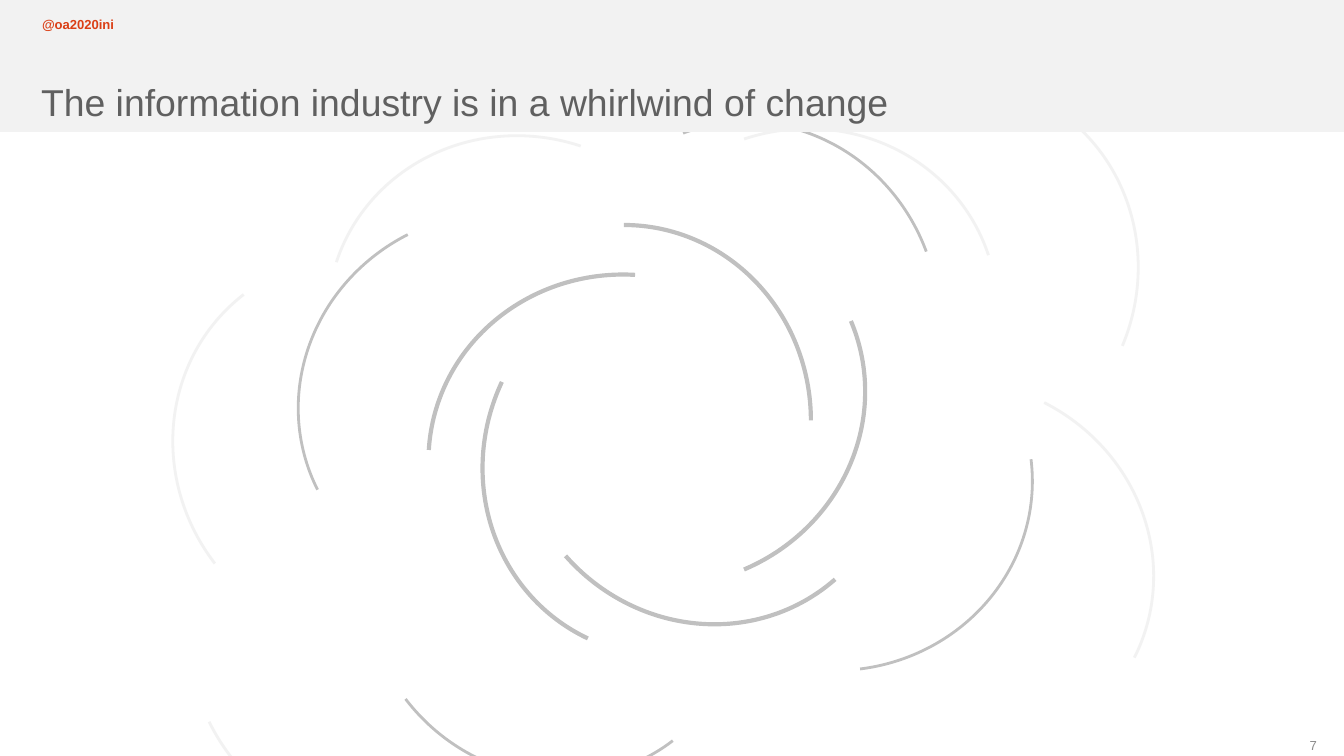
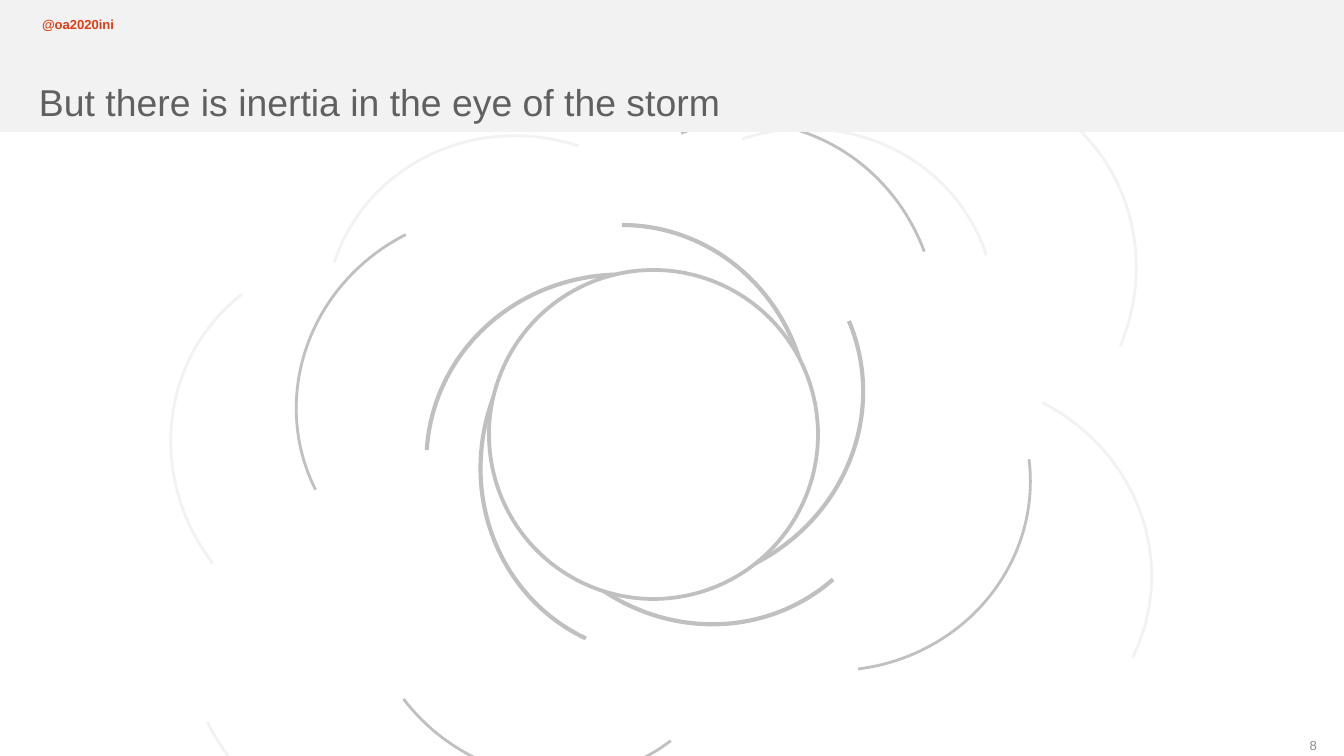
from typing import NamedTuple

from pptx import Presentation
from pptx.dml.color import RGBColor
from pptx.enum.shapes import MSO_SHAPE
from pptx.enum.text import MSO_ANCHOR, PP_ALIGN
from pptx.util import Emu, Pt

EMU_PER_PX = 914400 / 134.4
SLIDE_W, SLIDE_H = 1344, 756
BAND_H = 132
ARC_W, ARC_H = 374, 391
FONT = "Arial"
COLORS = {
    "paper": "FFFFFF",
    "pale": "F2F2F2",
    "ring": "C0C0C0",
    "title": "606060",
    "handle": "DB3F16",
    "number": "8C8C8C",
}


class Box(NamedTuple):
    x: int
    y: int
    w: int
    h: int


class Arc(NamedTuple):
    x: int
    y: int
    rotation: float


class Swirl(NamedTuple):
    color: str
    weight: float
    flipped: bool
    arcs: tuple[Arc, ...]


class TextStyle(NamedTuple):
    size: int
    color: str
    bold: bool = False
    align: PP_ALIGN = PP_ALIGN.LEFT
    anchor: MSO_ANCHOR = MSO_ANCHOR.TOP
    wrap: bool = False


class StormSlide(NamedTuple):
    number: int
    title: str
    shift: int
    eye: bool


TITLE = TextStyle(20, "title", anchor=MSO_ANCHOR.BOTTOM, wrap=True)
HANDLE = TextStyle(7, "handle", bold=True)
NUMBER = TextStyle(7, "number", align=PP_ALIGN.RIGHT, anchor=MSO_ANCHOR.BOTTOM)

SWIRLS = (
    Swirl("pale", 1.5, True, (
        Arc(616, 121, 71.7), Arc(773, 374, 116.8), Arc(176, 254, 322.4))),
    Swirl("pale", 1.5, False, (
        Arc(335, 128, 288.3), Arc(190, 444, 153.9), Arc(763, 78, 22.8))),
    Swirl("ring", 2.25, False, (
        Arc(437, 225, 0), Arc(437, 266, 273.4), Arc(484, 266, 205.2),
        Arc(519, 237, 138.7), Arc(484, 202, 67))),
    Swirl("ring", 1.5, False, (
        Arc(564, 121, 339.7), Arc(305, 206, 243.2), Arc(367, 390, 142.6),
        Arc(650, 288, 82.9))),
)
EYE = Box(489, 270, 329, 329)

SLIDES = (
    StormSlide(7, "The information industry is in a whirlwind of change", 0, False),
    StormSlide(8, "But there is inertia in the eye of the storm", -2, True),
)


def px(n: int) -> Emu:
    """Turn pixels into EMU."""
    return Emu(round(n * EMU_PER_PX))


def rgb(name: str) -> RGBColor:
    """Look up a named colour."""
    return RGBColor.from_string(COLORS[name])


def add_preset(shapes, kind: MSO_SHAPE, box: Box, fill: str = "",
               line: str = "", weight: float = 0):
    """Add a preset shape with an optional fill and outline."""
    sp = shapes.add_shape(kind, *map(px, box))
    sp.shadow.inherit = False
    if fill:
        sp.fill.solid()
        sp.fill.fore_color.rgb = rgb(fill)
    else:
        sp.fill.background()
    if line:
        sp.line.color.rgb = rgb(line)
        sp.line.width = Pt(weight)
    else:
        sp.line.fill.background()
    return sp


def add_text(s, box: Box, text: str, style: TextStyle) -> None:
    """Add a one-run text box without insets."""
    tf = s.shapes.add_textbox(*map(px, box)).text_frame
    tf.margin_left = tf.margin_top = tf.margin_right = tf.margin_bottom = 0
    tf.word_wrap = style.wrap
    tf.vertical_anchor = style.anchor
    p = tf.paragraphs[0]
    p.alignment = style.align
    r = p.add_run()
    r.text = text
    r.font.name = FONT
    r.font.size = Pt(style.size)
    r.font.bold = style.bold
    r.font.color.rgb = rgb(style.color)


def add_swirl(s, swirl: Swirl, shift: int) -> None:
    """Add a group of arcs that share one line style."""
    group = s.shapes.add_group_shape()
    for arc in swirl.arcs:
        box = Box(arc.x + shift, arc.y, ARC_W, ARC_H)
        sp = add_preset(group.shapes, MSO_SHAPE.ARC, box,
                        line=swirl.color, weight=swirl.weight)
        sp.rotation = arc.rotation
        if swirl.flipped:
            sp._element.spPr.xfrm.set("flipH", "1")


def add_storm_slide(prs, storm: StormSlide) -> None:
    """Build one slide of the storm sequence."""
    s = prs.slides.add_slide(prs.slide_layouts[6])
    s.background.fill.solid()
    s.background.fill.fore_color.rgb = rgb("paper")
    add_text(s, Box(1212, 734, 105, 19), str(storm.number), NUMBER)
    for swirl in SWIRLS:
        add_swirl(s, swirl, storm.shift)
    if storm.eye:
        add_preset(s.shapes, MSO_SHAPE.OVAL, EYE, "paper", "ring", 2)
    add_preset(s.shapes, MSO_SHAPE.RECTANGLE, Box(0, 0, SLIDE_W, BAND_H), "pale")
    add_text(s, Box(42, 16, 75, 17), "@oa2020ini", HANDLE)
    add_text(s, Box(41 + storm.shift, 47, 973, 77), storm.title, TITLE)


def main() -> None:
    """Build and save the deck."""
    prs = Presentation()
    prs.slide_width, prs.slide_height = px(SLIDE_W), px(SLIDE_H)
    for storm in SLIDES:
        add_storm_slide(prs, storm)
    prs.save("out.pptx")


if __name__ == "__main__":
    main()
